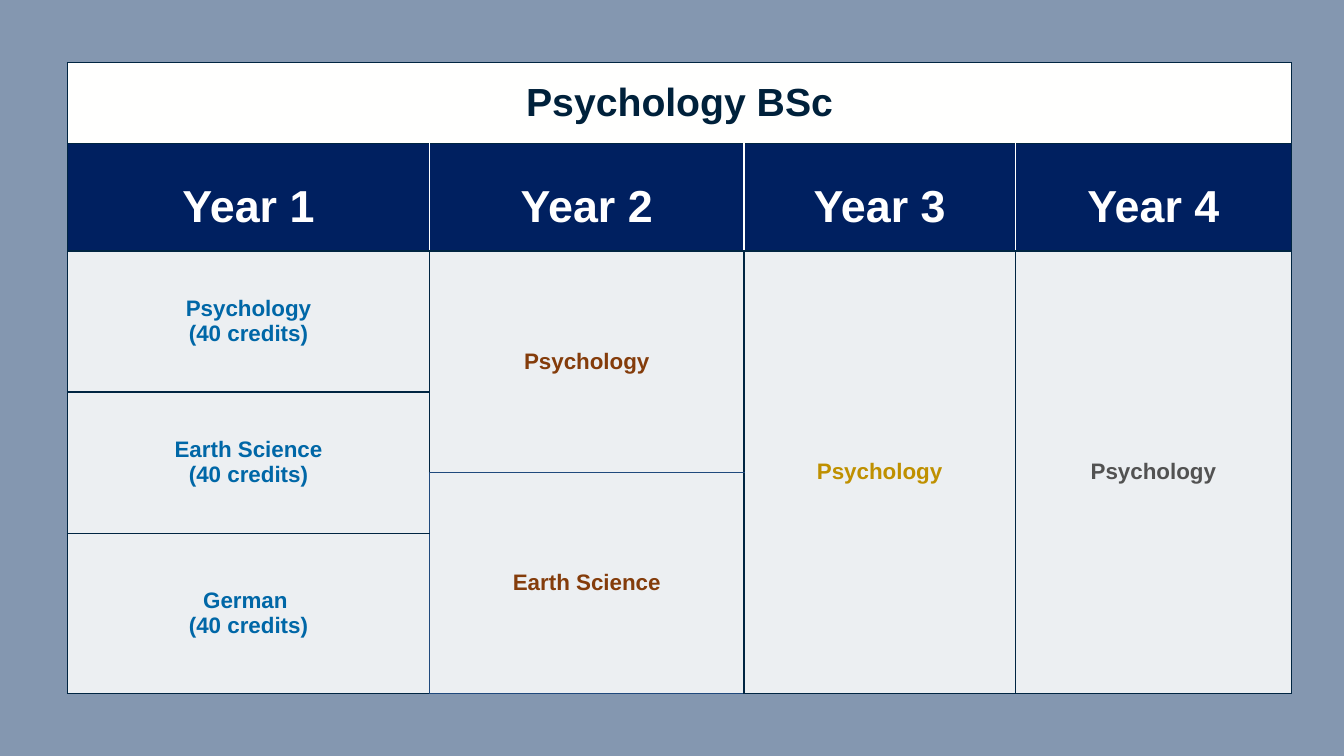
"""Build a slide with the four-year course table of the Psychology BSc."""
from lxml import etree
from pptx import Presentation
from pptx.dml.color import RGBColor
from pptx.enum import text
from pptx.oxml import ns
from pptx.util import Inches, Pt


class Theme:
    font = "Arial"
    background = "8497B0"
    white = "FFFFFE"
    navy = "002060"
    border = "002542"
    inner_border = "1F497D"
    title = "00213B"
    year = "FFFFFF"
    year_1 = "0067A7"
    year_2 = "843C0B"
    year_3 = "BF9000"
    year_4 = "525252"
    title_size = 28
    year_size = 32
    subject_size = 16
    subject_alpha = 85


def add_border(cell, sides):
    properties = cell._tc.get_or_add_tcPr()
    for position, (side, color) in enumerate(sides.items()):
        line = etree.Element(ns.qn(f"a:ln{side}"), w=str(Pt(1)))
        fill = etree.SubElement(line, ns.qn("a:solidFill"))
        etree.SubElement(fill, ns.qn("a:srgbClr"), val=color)
        properties.insert(position, line)


def fill_block(table, row, column, row_span, column_span, lines, size, color,
               fill, alpha=100, spacing=None, **sides):
    borders = {side: sides.get(side, Theme.border) for side in "LRTB"}
    for r in range(row, row + row_span):
        for c in range(column, column + column_span):
            cell = table.cell(r, c)
            cell.fill.solid()
            cell.fill.fore_color.rgb = RGBColor.from_string(fill)
            if alpha < 100:
                fill_color = cell._tc.tcPr.find(".//" + ns.qn("a:srgbClr"))
                etree.SubElement(fill_color, ns.qn("a:alpha"), val=str(alpha * 1000))
            add_border(cell, borders)
    cell = table.cell(row, column)
    if row_span * column_span > 1:
        cell.merge(table.cell(row + row_span - 1, column + column_span - 1))
    cell.vertical_anchor = text.MSO_ANCHOR.MIDDLE
    cell.margin_left = cell.margin_right = Inches(0.12)
    cell.margin_top = cell.margin_bottom = Inches(0.06)
    cell.text = "\n".join(lines)
    for paragraph in cell.text_frame.paragraphs:
        paragraph.alignment = text.PP_ALIGN.CENTER
        paragraph.line_spacing = spacing
        paragraph.font.name = Theme.font
        paragraph.font.size = Pt(size)
        paragraph.font.bold = True
        paragraph.font.color.rgb = RGBColor.from_string(color)


presentation = Presentation()
presentation.slide_width = Inches(13.33)
presentation.slide_height = Inches(7.5)
slide = presentation.slides.add_slide(presentation.slide_layouts[6])
slide.background.fill.solid()
slide.background.fill.fore_color.rgb = RGBColor.from_string(Theme.background)

column_widths = [3.59, 3.12, 2.69, 2.74]
row_heights = [0.8, 1.07, 1.4, 0.8, 0.6, 1.59]
table = slide.shapes.add_table(
    len(row_heights), len(column_widths), Inches(0.67), Inches(0.62),
    Inches(sum(column_widths)), Inches(sum(row_heights))).table
table.first_row = table.horz_banding = False
for column, width in zip(table.columns, column_widths):
    column.width = Inches(width)
for row, height in zip(table.rows, row_heights):
    row.height = Inches(height)

fill_block(table, 0, 0, 1, 4, ["Psychology BSc"], Theme.title_size,
           Theme.title, Theme.white)

last = len(column_widths) - 1
for column in range(len(column_widths)):
    fill_block(table, 1, column, 1, 1, [f"Year {column + 1}"],
               Theme.year_size, Theme.year, Theme.navy, spacing=1.4,
               L=Theme.white if column > 0 else Theme.border,
               R=Theme.white if column < last else Theme.border)

credits = "(40 credits)"
inner = Theme.inner_border
subjects = [
    (2, 0, 1, ["Psychology", credits], Theme.year_1, {}),
    (3, 0, 2, ["Earth Science", credits], Theme.year_1, {"R": inner}),
    (5, 0, 1, ["German ", credits], Theme.year_1, {"R": inner}),
    (2, 1, 2, ["Psychology"], Theme.year_2, {"B": inner}),
    (4, 1, 2, ["Earth Science"], Theme.year_2, {"L": inner, "T": inner, "B": inner}),
    (2, 2, 4, ["Psychology"], Theme.year_3, {}),
    (2, 3, 4, ["Psychology"], Theme.year_4, {}),
]
for row, column, row_span, lines, color, sides in subjects:
    fill_block(table, row, column, row_span, 1, lines, Theme.subject_size,
               color, Theme.white, Theme.subject_alpha, **sides)

presentation.save("out.pptx")
